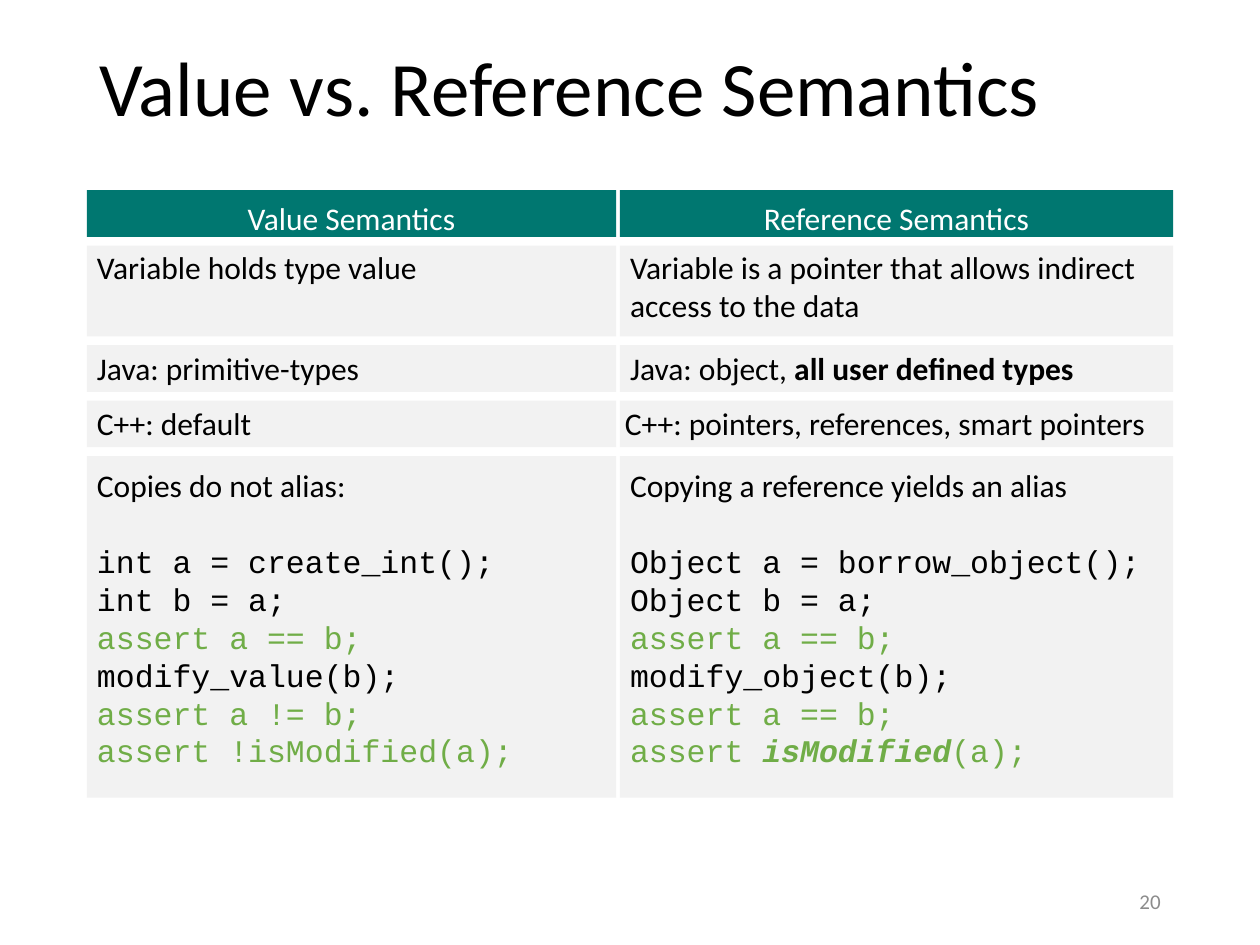
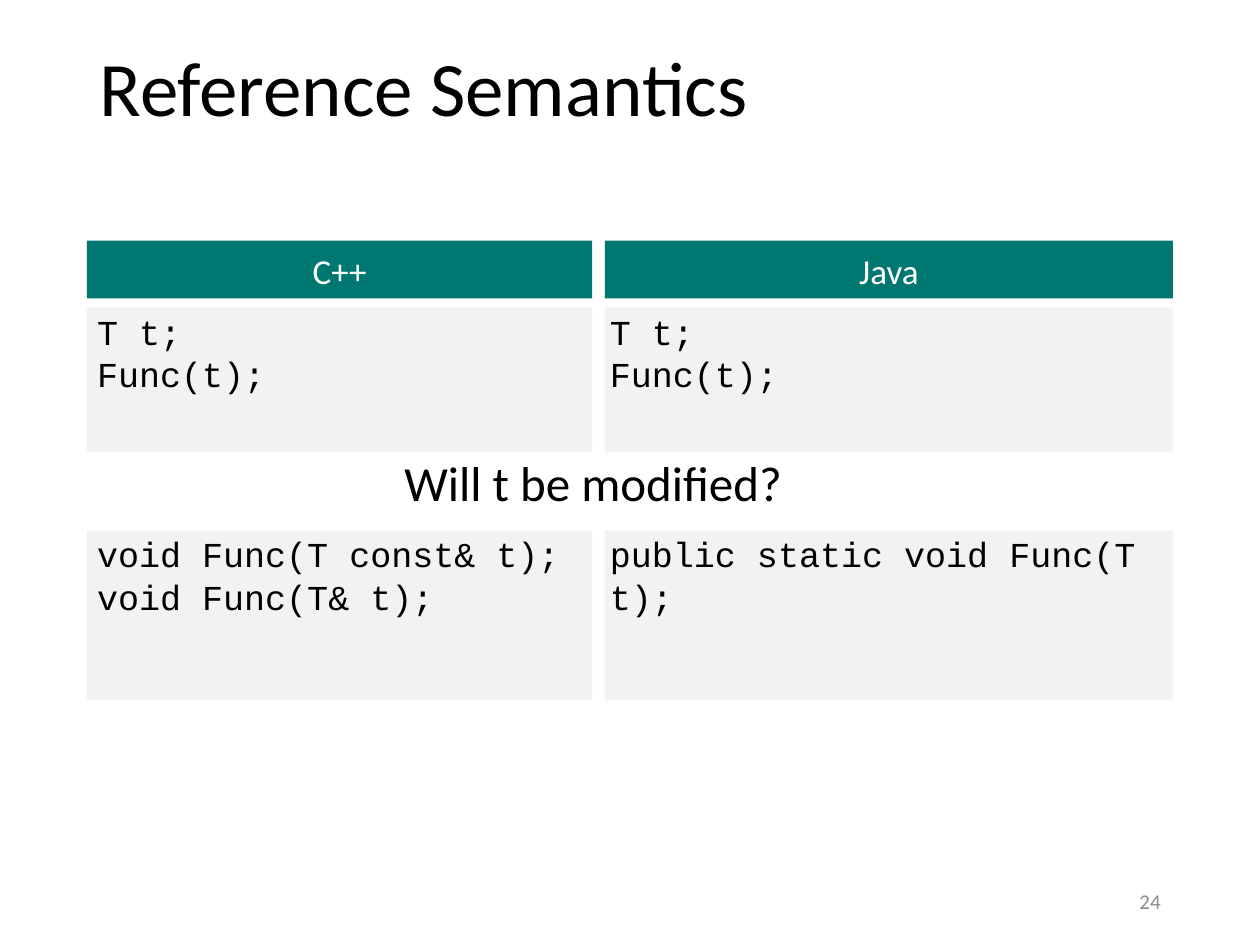
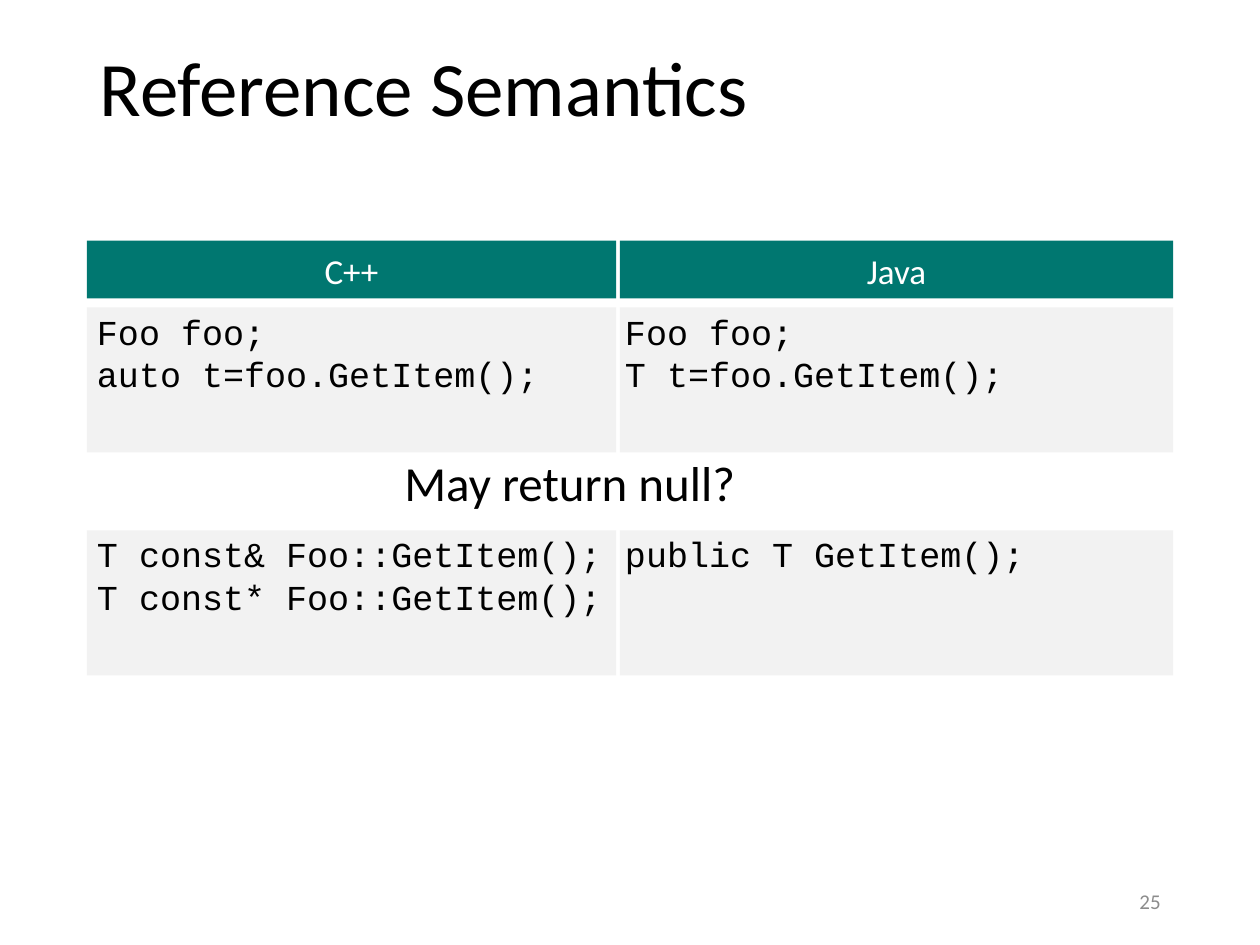
from dataclasses import dataclass

from pptx import Presentation
from pptx.dml.color import RGBColor
from pptx.enum.shapes import MSO_SHAPE
from pptx.enum.text import MSO_ANCHOR, MSO_AUTO_SIZE, PP_ALIGN
from pptx.oxml.ns import qn
from pptx.util import Inches, Pt


@dataclass(frozen=True)
class Theme:
    text_font: str = "Calibri"
    code_font: str = "Courier New"
    ink: str = "000000"
    header_ink: str = "FFFFFF"
    header_fill: str = "007770"
    cell_fill: str = "F2F2F2"
    check: str = "70AD47"
    number_ink: str = "8C8C8C"
    title_size: int = 44
    question_size: int = 28
    number_size: int = 12
    line_spacing: float = 0.9
    code_gap: int = 22


THEME = Theme()
LEFT, RIGHT = 0.69, 9.31
ROW_GAP = 0.07
QUESTION_BOX = (3.11, 3.53, 0.53)

RUN_STYLES = {
    "prose": (THEME.text_font, THEME.ink, False, False),
    "strong": (THEME.text_font, THEME.ink, True, False),
    "header": (THEME.text_font, THEME.header_ink, False, False),
    "code": (THEME.code_font, THEME.ink, False, False),
    "check": (THEME.code_font, THEME.check, False, False),
    "check_strong": (THEME.code_font, THEME.check, True, True),
}


def lines(style, *texts):
    return [[(text, style)] for text in texts]


def header(height, left, right):
    return dict(height=height, cells=(lines("header", left), lines("header", right)),
                fill=THEME.header_fill, align=PP_ALIGN.CENTER, pads=(0, 0), pad_y=0.07)


def row(height, left, right, pads=(0.08, 0.08), pad_y=0.02):
    return dict(height=height, cells=(left, right), fill=THEME.cell_fill,
                align=PP_ALIGN.LEFT, pads=pads, pad_y=pad_y)


def code_row(height, left, right):
    return row(height, lines("code", *left), lines("code", *right), pads=(0.08, 0.04))


def question(text):
    return dict(height=0.48, question=text)


SLIDES = [
    dict(
        title="Value vs. Reference Semantics", number="20",
        top=1.51, left_width=4.2, gutter=0.03, size=18,
        rows=[
            header(0.37, "Value Semantics", "Reference Semantics"),
            row(0.72, lines("prose", "Variable holds type value"),
                lines("prose", "Variable is a pointer that allows indirect access to the data")),
            row(0.37, lines("prose", "Java: primitive-types"),
                [[("Java: object, ", "prose"), ("all user defined types", "strong")]],
                pad_y=0.03),
            row(0.37, lines("prose", "C++: default"),
                lines("prose", "C++: pointers, references, smart pointers"),
                pads=(0.08, 0.04), pad_y=0.03),
            row(2.71,
                lines("prose", "Copies do not alias:")
                + lines("code", "int a = create_int();", "int b = a;")
                + lines("check", "assert a == b;")
                + lines("code", "modify_value(b);")
                + lines("check", "assert a != b;", "assert !isModified(a);"),
                lines("prose", "Copying a reference yields an alias")
                + lines("code", "Object a = borrow_object();", "Object b = a;")
                + lines("check", "assert a == b;")
                + lines("code", "modify_object(b);")
                + lines("check", "assert a == b;")
                + [[("assert ", "check"), ("isModified", "check_strong"), ("(a);", "check")]],
                pad_y=0.08),
        ],
    ),
    dict(
        title="Reference Semantics", number="24",
        top=1.91, left_width=4.01, gutter=0.1, size=20,
        rows=[
            header(0.46, "C++", "Java"),
            code_row(1.15, ["T t;", "Func(t);"], ["T t;", "Func(t);"]),
            question("Will t be modified?"),
            code_row(1.35, ["void Func(T const& t);", "void Func(T& t);"],
                     ["public static void Func(T t);"]),
        ],
    ),
    dict(
        title="Reference Semantics", number="25",
        top=1.91, left_width=4.2, gutter=0.03, size=20,
        rows=[
            header(0.46, "C++", "Java"),
            code_row(1.15, ["Foo foo;", "auto t=foo.GetItem();"],
                     ["Foo foo;", "T t=foo.GetItem();"]),
            question("May return null?"),
            code_row(1.15, ["T const& Foo::GetItem();", "T const* Foo::GetItem();"],
                     ["public T GetItem();"]),
        ],
    ),
]


def add_run(paragraph, text, size, font, color, bold=False, italic=False):
    run = paragraph.add_run()
    run.text = text
    run.font.name, run.font.size = font, Pt(size)
    run.font.color.rgb = RGBColor.from_string(color)
    run.font.bold, run.font.italic = bold, italic


def place(part, left, top, width, height):
    part.left, part.top = Inches(left), Inches(top)
    part.width, part.height = Inches(width), Inches(height)


def fill_placeholder(placeholder, text, size, box, anchor):
    place(placeholder, *box)
    frame = placeholder.text_frame
    frame.word_wrap = True
    frame.auto_size = MSO_AUTO_SIZE.NONE
    frame.vertical_anchor = anchor
    paragraph = frame.paragraphs[0]
    properties = paragraph._p.get_or_add_pPr()
    properties.set("marL", "0")
    properties.set("indent", "0")
    properties.append(properties.makeelement(qn("a:buNone"), {}))
    paragraph.alignment = PP_ALIGN.LEFT
    paragraph.line_spacing = THEME.line_spacing
    paragraph.space_before = Pt(0)
    add_run(paragraph, text, size, THEME.text_font, THEME.ink)


def add_number(slide, number):
    box = slide.shapes.add_textbox(Inches(7.06), Inches(6.95), Inches(2.25), Inches(0.4))
    frame = box.text_frame
    frame.word_wrap = True
    frame.vertical_anchor = MSO_ANCHOR.MIDDLE
    paragraph = frame.paragraphs[0]
    paragraph.alignment = PP_ALIGN.RIGHT
    add_run(paragraph, number, THEME.number_size, THEME.text_font, THEME.number_ink)


def add_cell(slide, box, content, band, pad_left, size):
    cell = slide.shapes.add_shape(MSO_SHAPE.RECTANGLE, *map(Inches, box))
    cell.shadow.inherit = False
    cell.fill.solid()
    cell.fill.fore_color.rgb = RGBColor.from_string(band["fill"])
    cell.line.fill.background()
    frame = cell.text_frame
    frame.word_wrap = True
    frame.vertical_anchor = MSO_ANCHOR.TOP
    frame.margin_left, frame.margin_right = Inches(pad_left), 0
    frame.margin_top = frame.margin_bottom = Inches(band["pad_y"])
    previous_style = None
    for index, runs in enumerate(content):
        paragraph = frame.add_paragraph() if index else frame.paragraphs[0]
        paragraph.alignment = band["align"]
        style = runs[0][1]
        if previous_style == "prose" and style == "code":
            paragraph.space_before = Pt(THEME.code_gap)
        previous_style = style
        for text, run_style in runs:
            add_run(paragraph, text, size, *RUN_STYLES[run_style])


def add_comparison(slide, content):
    right_start = LEFT + content["left_width"] + content["gutter"]
    columns = ((LEFT, content["left_width"]), (right_start, RIGHT - right_start))
    top = content["top"]
    for band in content["rows"]:
        if "question" in band:
            left, width, height = QUESTION_BOX
            fill_placeholder(slide.placeholders[1], band["question"], THEME.question_size,
                             (left, top - ROW_GAP, width, height), MSO_ANCHOR.TOP)
        else:
            for (left, width), cell, pad in zip(columns, band["cells"], band["pads"]):
                add_cell(slide, (left, top, width, band["height"]), cell, band, pad,
                         content["size"])
        top += band["height"] + ROW_GAP


def main():
    deck = Presentation()
    deck.slide_width, deck.slide_height = Inches(10), Inches(7.5)
    title_and_body, title_only = deck.slide_layouts[1], deck.slide_layouts[5]
    for content in SLIDES:
        has_question = any("question" in band for band in content["rows"])
        slide = deck.slides.add_slide(title_and_body if has_question else title_only)
        fill_placeholder(slide.shapes.title, content["title"], THEME.title_size,
                         (LEFT, 0, RIGHT - LEFT, 1.45), MSO_ANCHOR.MIDDLE)
        add_number(slide, content["number"])
        add_comparison(slide, content)
    deck.save("out.pptx")


if __name__ == "__main__":
    main()
